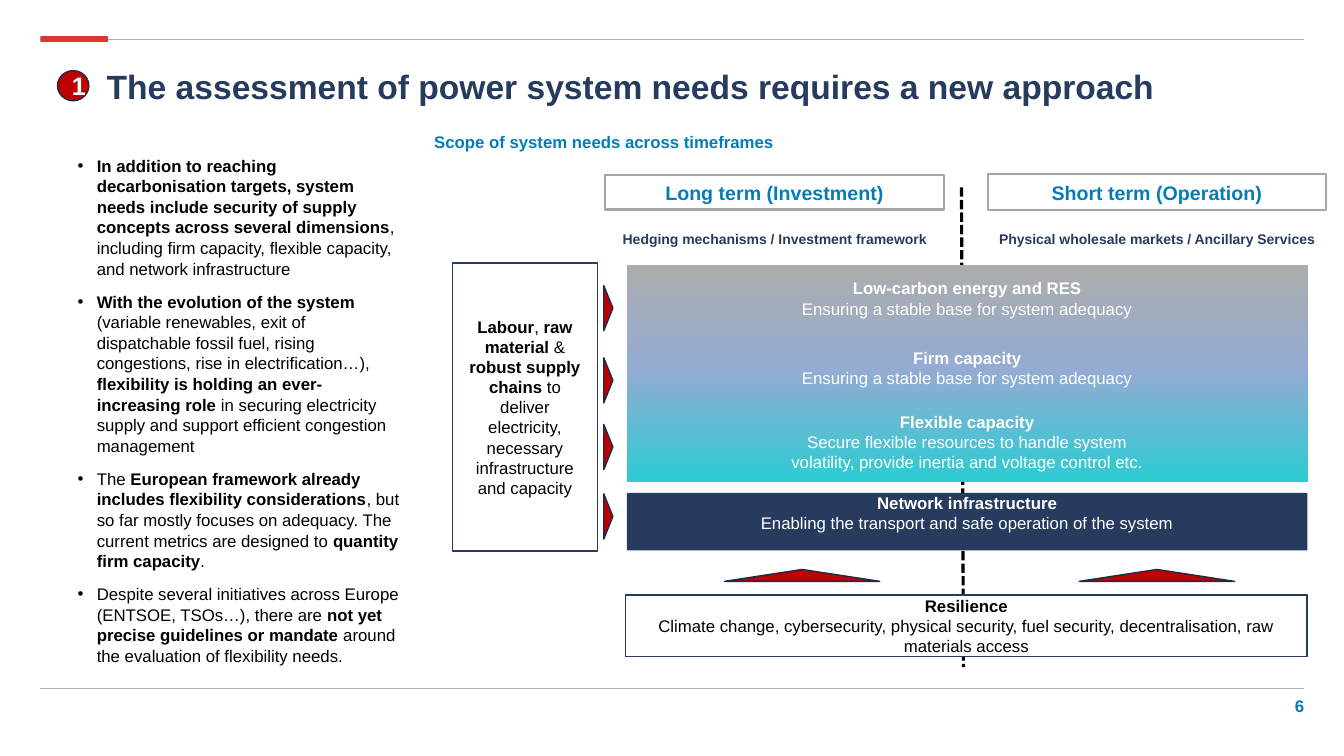
from copy import deepcopy
from dataclasses import dataclass
from typing import Optional

from lxml.etree import SubElement
from pptx import Presentation
from pptx.dml.color import RGBColor
from pptx.enum.dml import MSO_LINE
from pptx.enum.shapes import MSO_CONNECTOR, MSO_SHAPE as Form
from pptx.enum.text import MSO_ANCHOR as Anchor, MSO_AUTO_SIZE as Fit, PP_ALIGN as Align
from pptx.oxml.ns import qn
from pptx.util import Cm, Pt

NAVY = RGBColor(0x27, 0x3B, 0x5E)
INK = RGBColor(0x1D, 0x2C, 0x46)
BLUE = RGBColor(0x03, 0x7C, 0xBA)
RED = RGBColor(0xC0, 0x00, 0x00)
CORAL = RGBColor(0xDC, 0x38, 0x32)
GREY = RGBColor(0xAC, 0xAC, 0xAC)
EDGE = RGBColor(0xA6, 0xA6, 0xA6)
SKY = RGBColor(0x94, 0xAB, 0xD3)
TEAL = RGBColor(0x2C, 0xCC, 0xD3)
BLACK = RGBColor(0, 0, 0)
WHITE = RGBColor(255, 255, 255)


@dataclass
class Box:
    """A shape, or a plain text box if it has no form; ** marks bold text."""
    x: float
    y: float
    w: float
    h: float
    text: tuple[str, ...] = ()
    form: Optional[Form] = Form.RECTANGLE
    fill: Optional[RGBColor] = None
    line: Optional[RGBColor] = None
    width: float = 1
    size: float = 12
    color: RGBColor = BLACK
    align: Align = Align.CENTER
    anchor: Anchor = Anchor.MIDDLE
    pad: tuple[float, float] = (0.25, 0.13)
    turn: float = 0


@dataclass
class Rule:
    start: tuple[float, float]
    end: tuple[float, float]
    color: RGBColor = GREY
    width: float = 0.5
    dash: Optional[MSO_LINE] = None


def apply(item, form: dict) -> None:
    for name, value in form.items():
        setattr(item, name, value)


def write(para, text: str, size: float, color: RGBColor) -> None:
    for place, part in enumerate(text.split("**")):
        if part:
            run = para.add_run()
            run.text = part
            apply(run.font, {"name": "Arial", "size": Pt(size), "bold": place % 2 == 1})
            run.font.color.rgb = color


def fill_text(shape, box: Box) -> None:
    frame = shape.text_frame
    across, down = map(Cm, box.pad)
    apply(frame, {"word_wrap": True, "auto_size": Fit.NONE,
                  "vertical_anchor": box.anchor,
                  "margin_left": across, "margin_right": across,
                  "margin_top": down, "margin_bottom": down})
    for place, text in enumerate(box.text):
        para = frame.add_paragraph() if place else frame.paragraphs[0]
        para.alignment = box.align
        write(para, text, box.size, box.color)


def draw_box(slide, box: Box):
    area = [Cm(v) for v in (box.x, box.y, box.w, box.h)]
    if box.form is None:
        shape = slide.shapes.add_textbox(*area)
    else:
        shape = slide.shapes.add_shape(box.form, *area)
        shape.shadow.inherit = False
        shape.rotation = box.turn
        for paint, color in ((shape.fill, box.fill), (shape.line.fill, box.line)):
            if color is None:
                paint.background()
            else:
                paint.solid()
                paint.fore_color.rgb = color
        if box.line is not None:
            shape.line.width = Pt(box.width)
    if box.text:
        fill_text(shape, box)
    return shape


def draw_rule(slide, rule: Rule) -> None:
    ends = [Cm(v) for v in rule.start + rule.end]
    line = slide.shapes.add_connector(MSO_CONNECTOR.STRAIGHT, *ends)
    line.line.color.rgb = rule.color
    apply(line.line, {"width": Pt(rule.width), "dash_style": rule.dash})
    SubElement(line._element.spPr, qn("a:effectLst"))


def add_bullets(shape) -> None:
    for place, para in enumerate(shape.text_frame.paragraphs):
        props = para._p.get_or_add_pPr()
        props.set("marL", str(Cm(0.48)))
        props.set("indent", str(-Cm(0.48)))
        tint = SubElement(props, qn("a:buClr"))
        SubElement(tint, qn("a:srgbClr"), val=str(BLACK))
        SubElement(props, qn("a:buFont"), typeface="Arial")
        SubElement(props, qn("a:buChar"), char="•")
        apply(para, {"line_spacing": 1.02, "space_after": Pt(6),
                     "space_before": Pt(3 if place else 0)})


def shade(shape, stops: tuple) -> None:
    fill = shape.fill
    fill.gradient()
    fill.gradient_angle = 270
    marks = shape._element.spPr.find(qn("a:gradFill")).find(qn("a:gsLst"))
    marks.insert(1, deepcopy(marks[0]))
    for mark, (place, color) in zip(fill.gradient_stops, stops):
        mark.color.rgb = color
        mark.position = place


def arrow(x: float, y: float, w: float, h: float, turn: float = 0) -> Box:
    return Box(x, y, w, h, form=Form.ISOSCELES_TRIANGLE, fill=RED, line=INK, turn=turn)


POINTS = (
    "**In addition to reaching decarbonisation targets, system needs include security of supply "
    "concepts across several dimensions**, including firm capacity, flexible capacity, and "
    "network infrastructure",
    "**With the evolution of the system **(variable renewables, exit of dispatchable fossil fuel, "
    "rising congestions, rise in electrification…), **flexibility is holding an ever-increasing "
    "role **in securing electricity supply and support efficient congestion management",
    "The **European framework already includes flexibility considerations**, but so far mostly "
    "focuses on adequacy. The current metrics are designed to **quantity firm capacity**.",
    "Despite several initiatives across Europe (ENTSOE, TSOs…), there are **not yet precise "
    "guidelines or mandate **around the evaluation of flexibility needs.",
)
STABLE = "Ensuring a stable base for system adequacy"
NEEDS = (
    (6.71, "**Low-carbon energy and RES**", STABLE),
    (8.46, "**Firm capacity**", STABLE),
    (10.08, "**Flexible capacity**", "Secure flexible resources to handle system volatility, "
                                     "provide inertia and voltage control etc."),
)
TERMS = (
    (24.89, 4.39, 8.53, 0.91, "Short term (Operation)",
     "Physical wholesale markets / Ancillary Services"),
    (15.24, 4.42, 8.56, 0.86, "Long term (Investment)",
     "Hedging mechanisms / Investment framework"),
)


def main() -> None:
    deck = Presentation()
    deck.slide_width, deck.slide_height = Cm(33.87), Cm(19.05)
    slide = deck.slides.add_slide(deck.slide_layouts[5])

    # Frame of the page
    for y in (17.35, 0.99):
        draw_rule(slide, Rule((1.02, y), (32.87, y)))
    draw_box(slide, Box(1.02, 0.91, 1.7, 0.15, fill=CORAL))
    draw_box(slide, Box(31.5, 17.35, 1.37, 0.69, ("**6**",), None, color=BLUE,
                        align=Align.RIGHT, anchor=Anchor.BOTTOM, pad=(0, 0)))

    # Title and its badge
    head = Box(2.69, 1.78, 30.18, 0.97,
               ("**The assessment of power system needs requires a new approach**",),
               size=24, color=NAVY, align=Align.LEFT, anchor=Anchor.TOP, pad=(0, 0))
    title = slide.shapes.title
    apply(title, {"left": Cm(head.x), "top": Cm(head.y),
                  "width": Cm(head.w), "height": Cm(head.h)})
    fill_text(title, head)
    title.text_frame.paragraphs[0].line_spacing = 0.9
    draw_box(slide, Box(1.45, 1.78, 0.79, 0.76, ("**1**",), Form.OVAL, RED, INK,
                        size=18, color=WHITE))

    # Key points
    add_bullets(draw_box(slide, Box(1.96, 3.91, 8.23, 11.46, POINTS, None, align=Align.LEFT,
                                    anchor=Anchor.TOP, pad=(0, 0))))

    # Timeframes and the line between them
    draw_box(slide, Box(10.69, 3.2, 22.71, 0.74, ("**Scope of system needs across timeframes**",),
                        None, color=BLUE, align=Align.LEFT, anchor=Anchor.TOP))
    draw_rule(slide, Rule((24.23, 4.72), (24.28, 16.81), BLACK, 2.25, MSO_LINE.SQUARE_DOT))
    for x, y, w, h, term, means in TERMS:
        draw_box(slide, Box(x, y, w, h, (f"**{term}**",), fill=WHITE, line=EDGE, width=1.5,
                            size=14, color=BLUE, pad=(0.3, 0)))
        draw_box(slide, Box(x, 5.61, w, 8.92, (f"**{means}**",), None, size=10, color=NAVY,
                            anchor=Anchor.TOP, pad=(0.2, 0.2)))

    # Network and resilience layers
    draw_box(slide, Box(15.8, 12.42, 17.15, 1.45, (
        "**Network infrastructure**", "Enabling the transport and safe operation of the system"),
        fill=NAVY, color=WHITE, anchor=Anchor.TOP, pad=(0, 0)))
    draw_box(slide, Box(15.77, 14.99, 17.17, 1.55, (
        "**Resilience**", "Climate change, cybersecurity, physical security, fuel security, "
                          "decentralisation, raw materials access"), fill=WHITE, line=NAVY))

    # Supply chain input and arrows
    draw_box(slide, Box(11.4, 6.63, 3.66, 7.26, (
        "**Labour**, **raw material **& **robust supply chains** to deliver electricity, "
        "necessary infrastructure and capacity",), fill=WHITE, line=NAVY))
    for x in (18.26, 27.2):
        draw_box(slide, arrow(x, 14.35, 3.91, 0.3))
    for y in (7.65, 9.47, 11.15, 12.9):
        draw_box(slide, arrow(14.76, y, 1.14, 0.23, 90))

    # Capacity needs
    panel = draw_box(slide, Box(15.8, 6.68, 17.17, 5.46))
    shade(panel, ((0, GREY), (0.48, SKY), (1, TEAL)))
    for y, *text in NEEDS:
        draw_box(slide, Box(19.61, y, 9.53, 1.22, tuple(text), None, color=WHITE,
                            anchor=Anchor.TOP, pad=(0.3, 0.3)))

    deck.save("out.pptx")


if __name__ == "__main__":
    main()
